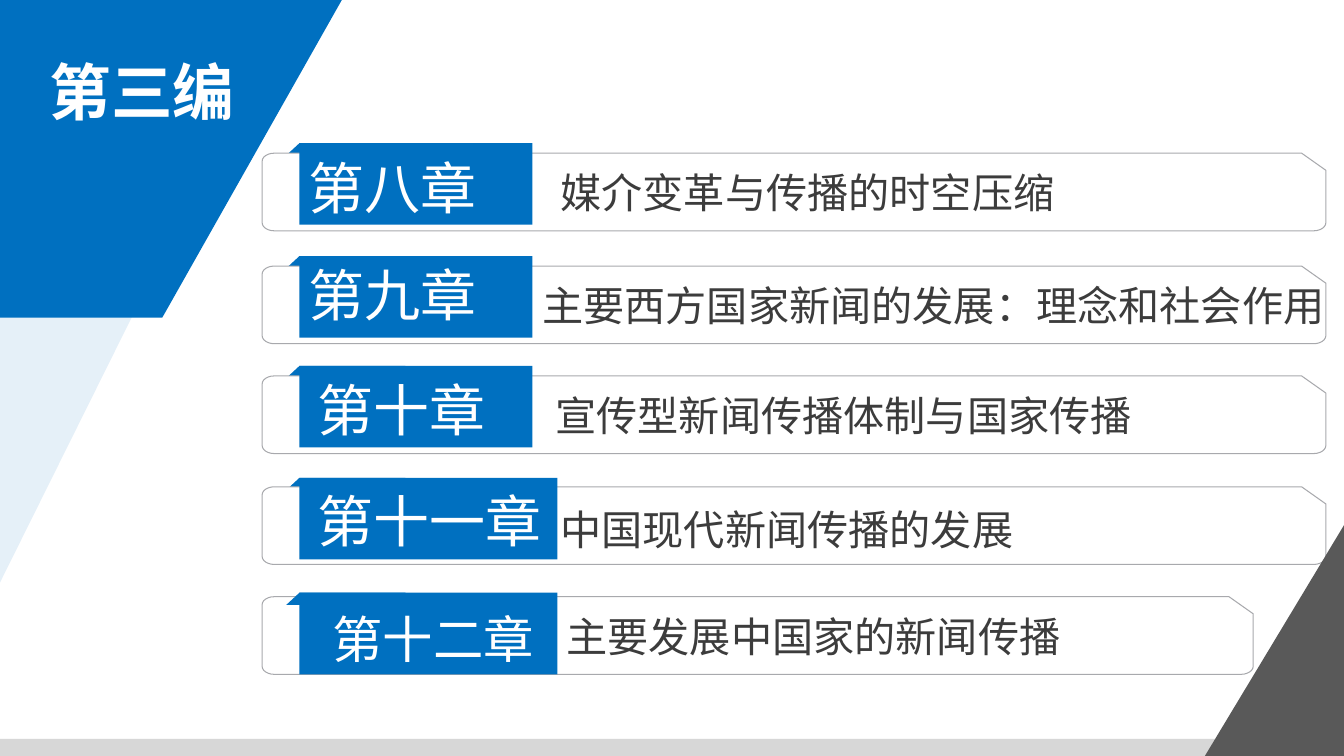
from math import cos, pi, sin

from lxml import etree
from pptx import Presentation
from pptx.dml.color import RGBColor
from pptx.enum.shapes import MSO_SHAPE as Shape
from pptx.enum.text import MSO_ANCHOR as Anchor, MSO_AUTO_SIZE as AutoSize, PP_ALIGN as Align
from pptx.oxml.ns import qn
from pptx.util import Inches, Pt

FONT = "Noto Sans CJK SC"
BLUE, GRAY, WHITE, OUTLINE, INK = "0070C0", "595959", "FFFFFF", "A8A9AD", "3C3C3C"
SLIDE_W, SLIDE_H = 13.33, 7.5
CARD_X, CARD_H = 2.6, 0.77
TAB_X, TAB_H = 2.97, 0.81

# tab top, tab width, card top, card right edge,
# (chapter, left, top, width, height, size), (topic, left, top, width)
CHAPTERS = [
    (1.42, 2.31, 1.52, 13.15, ("第八章", 2.96, 1.47, 2.44, 0.77, 40),
     ("媒介变革与传播的时空压缩", 5.46, 1.61, 5.64)),
    (2.54, 2.31, 2.64, 13.15, ("第九章", 2.96, 2.53, 2.32, 0.77, 40),
     ("主要西方国家新闻的发展：理念和社会作用", 5.28, 2.73, 8.11)),
    (3.63, 2.31, 3.73, 13.15, ("第十章", 3.05, 3.67, 1.87, 0.77, 40),
     ("宣传型新闻传播体制与国家传播", 5.41, 3.82, 8.49)),
    (4.74, 2.56, 4.83, 13.15, ("第十一章", 3.05, 4.77, 2.73, 0.77, 40),
     ("中国现代新闻传播的发展", 5.46, 4.95, 5.75)),
    (5.88, 2.56, 5.92, 12.43, ("第十二章", 3.2, 5.98, 2.69, 0.7, 36),
     ("主要发展中国家的新闻传播", 5.52, 6.01, 5.75)),
]


def rgb(value):
    return RGBColor.from_string(value)


def paint(shape, fill, line=None, opacity=None):
    """Fill a shape; opacity is a percentage, and line gives a hairline outline."""
    shape.shadow.inherit = False
    shape.fill.solid()
    shape.fill.fore_color.rgb = rgb(fill)
    if opacity:
        color = shape.element.spPr.find(qn("a:solidFill"))[0]
        etree.SubElement(color, qn("a:alpha")).set("val", str(opacity * 1000))
    if line:
        shape.line.color.rgb = rgb(line)
        shape.line.width = Pt(0)
    else:
        shape.line.fill.background()


def add_polygon(slide, points, fill, line=None, opacity=None):
    start, *rest = [(Inches(x), Inches(y)) for x, y in points]
    builder = slide.shapes.build_freeform(*start, scale=1.0)
    builder.add_line_segments(rest, close=True)
    paint(builder.convert_to_shape(), fill, line, opacity)


def add_rectangle(slide, left, top, width, height, fill, opacity=None):
    box = [Inches(v) for v in (left, top, width, height)]
    paint(slide.shapes.add_shape(Shape.RECTANGLE, *box), fill, opacity=opacity)


def write(shape, text, size, color, bold=False):
    frame = shape.text_frame
    frame.auto_size = AutoSize.NONE
    frame.word_wrap = True
    frame.vertical_anchor = Anchor.MIDDLE
    paragraph = frame.paragraphs[0]
    paragraph.alignment = Align.LEFT
    paragraph.line_spacing = 1.0
    run = paragraph.add_run()
    run.text = text
    run.font.size, run.font.bold = Pt(size), bold
    run.font.name = FONT
    run.font.color.rgb = rgb(color)
    east_asian = etree.SubElement(run.font._element, qn("a:ea"))
    east_asian.set("typeface", FONT)


def add_label(slide, text, left, top, width, height, size, color):
    box = [Inches(v) for v in (left, top, width, height)]
    write(slide.shapes.add_textbox(*box), text, size, color)


def add_card(slide, left, top, right, height):
    """Outlined card with three rounded corners and a snipped top right one."""
    rx, ry, snip_x, snip_y = 0.12, 0.08, 0.24, 0.17
    bottom = top + height

    def corner(cx, cy, first):
        angles = [(first + 15 * step) * pi / 180 for step in range(7)]
        return [(cx + rx * cos(a), cy + ry * sin(a)) for a in angles]

    points = [(right - snip_x, top), (right, top + snip_y)]
    points += corner(right - rx, bottom - ry, 0)
    points += corner(left + rx, bottom - ry, 90)
    points += corner(left + rx, top + ry, 180)
    add_polygon(slide, points, WHITE, OUTLINE)


def add_fold(slide, left, top):
    """Slanted strip that shows as the folded corner left of a tab."""
    width, height, slant = 1.31, 0.12, 0.13
    add_polygon(slide, [(left, top), (left + width - 2 * slant, top),
                        (left + width - slant, top + height),
                        (left - slant, top + height)], BLUE)


def add_chapter(slide, tab_top, tab_width, card_top, card_right, chapter, topic):
    fold_in_front = card_right < 13
    if not fold_in_front:
        add_fold(slide, TAB_X, tab_top)
    add_card(slide, CARD_X, card_top, card_right, CARD_H)
    if fold_in_front:
        add_fold(slide, TAB_X, tab_top)
    add_rectangle(slide, TAB_X, tab_top, tab_width, TAB_H, BLUE)
    add_label(slide, *topic, 0.59, 29.4, INK)
    add_label(slide, *chapter, WHITE)


def add_backdrop(slide):
    add_rectangle(slide, 0, 7.33, SLIDE_W, 0.17, GRAY, opacity=24)
    add_polygon(slide, [(0, 0), (2.87, 0), (0, 5.78)], BLUE, opacity=10)
    add_polygon(slide, [(0, 0), (3.39, 0), (1.61, 3.15), (0, 3.15)], BLUE)


def add_title(slide, left, top, width, height):
    title = slide.shapes.title
    title.left, title.top = Inches(left), Inches(top)
    title.width, title.height = Inches(width), Inches(height)
    write(title, "第三编", 44, WHITE, bold=True)
    slide.shapes.element.append(title.element)  # bring to front


def main():
    deck = Presentation()
    deck.slide_width, deck.slide_height = Inches(SLIDE_W), Inches(SLIDE_H)
    slide = deck.slides.add_slide(deck.slide_layouts[5])
    add_backdrop(slide)
    for chapter_row in CHAPTERS:
        add_chapter(slide, *chapter_row)
    add_polygon(slide, [(SLIDE_W, SLIDE_H), (11.95, SLIDE_H), (SLIDE_W, 5.21)], GRAY)
    add_title(slide, 0.39, 0.48, 3.12, 0.84)
    deck.save("out.pptx")


if __name__ == "__main__":
    main()
